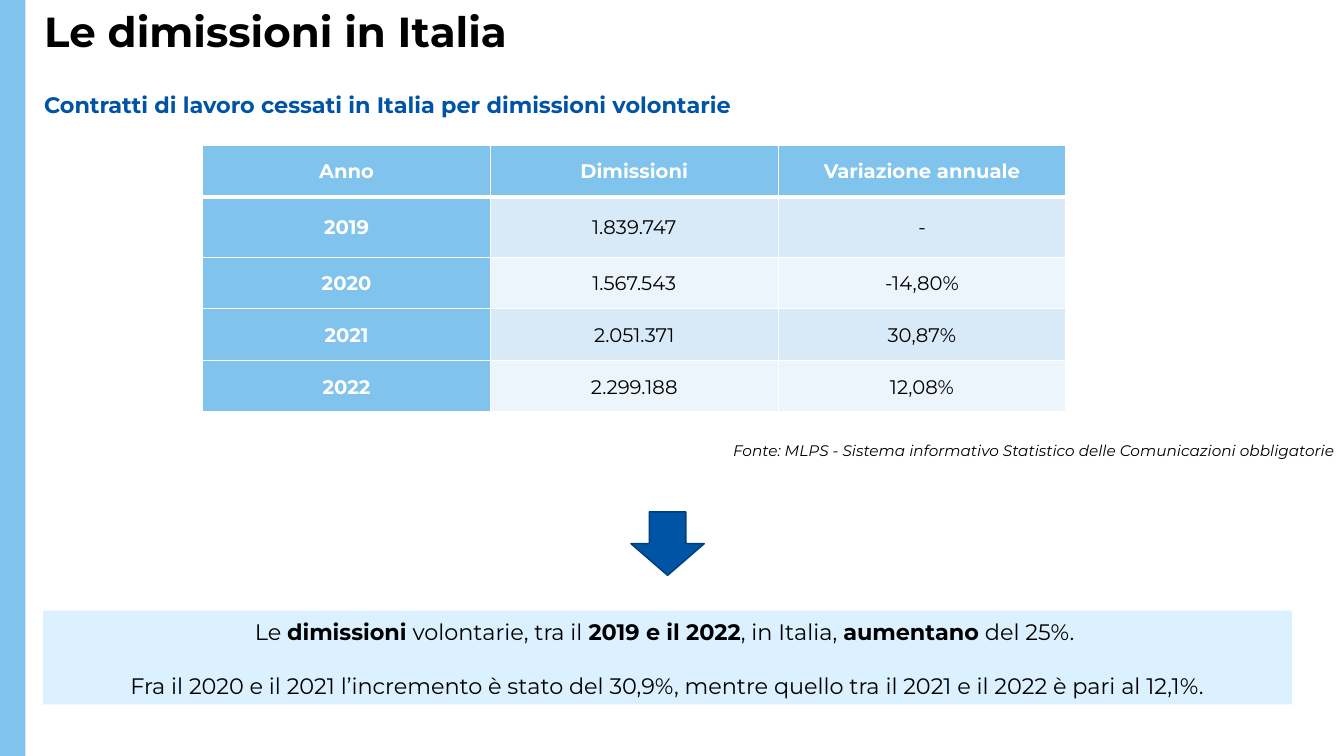
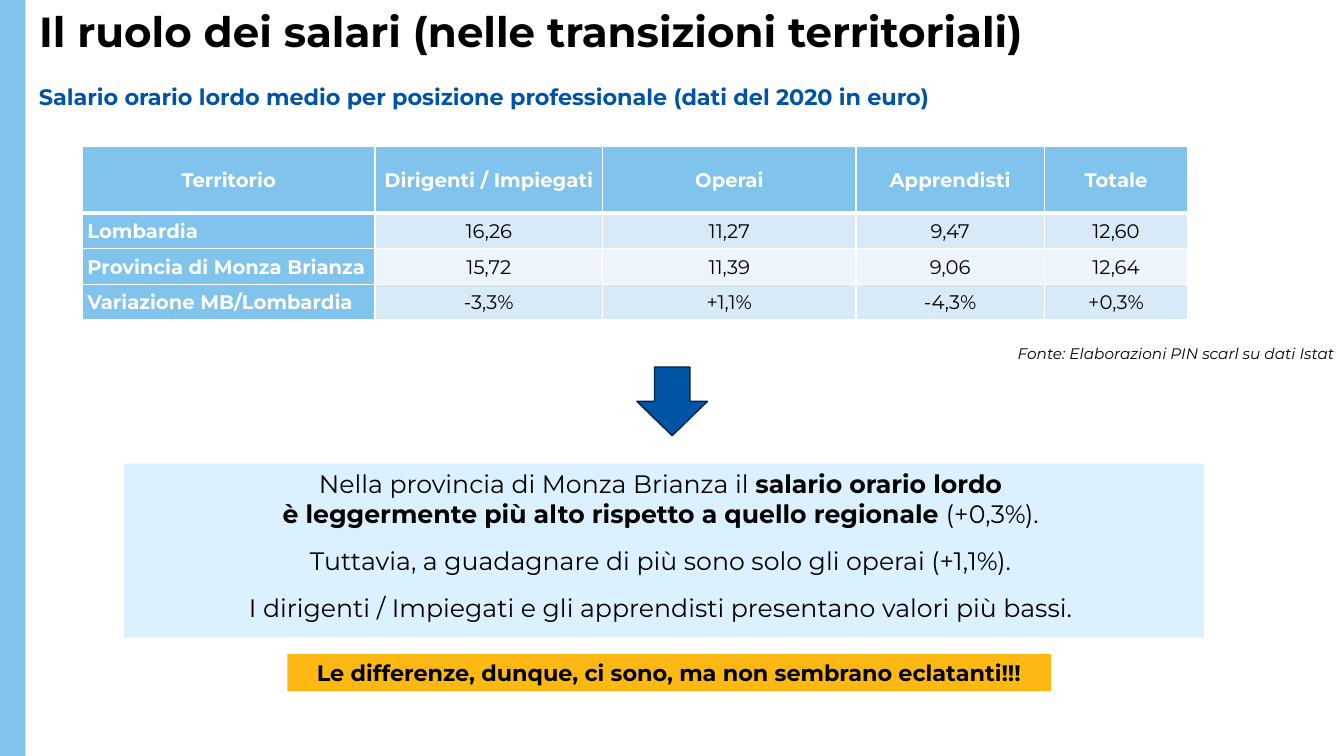
from lxml import etree
from pptx import Presentation
from pptx.dml.color import RGBColor
from pptx.enum import shapes, text
from pptx.oxml import ns
from pptx.util import Cm, Pt

FONT = "Montserrat"
BLACK, WHITE = "000000", "FFFFFF"
SKY, BLUE, YELLOW = "80C3ED", "0054A6", "FDB813"
PALE, STRIPES = "CCECFF", ("D8E9F8", "EDF5FC")
LEFT, CENTER, RIGHT = text.PP_ALIGN.LEFT, text.PP_ALIGN.CENTER, text.PP_ALIGN.RIGHT
TOP, MIDDLE = text.MSO_ANCHOR.TOP, text.MSO_ANCHOR.MIDDLE
BREAK = "\n"


def paint(fill, color):
    fill.solid()
    fill.fore_color.rgb = RGBColor.from_string(color)


def write(frame, paras, size, color=BLACK, align=LEFT, leading=1.07, gap=0, italic=False):
    frame.word_wrap = True
    for index, spans in enumerate(paras):
        para = frame.add_paragraph() if index else frame.paragraphs[0]
        para.alignment = align
        para.line_spacing = leading
        para.space_before = Pt(gap if index else 0)
        for words, bold in spans:
            if words == BREAK:
                para.add_line_break()
                continue
            span = para.add_run()
            span.text = words
            span.font.name = FONT
            span.font.size = Pt(size)
            span.font.bold = bold
            span.font.italic = italic
            paint(span.font.fill, color)


topics = [
    {
        "title": "Le dimissioni in Italia",
        "left": 0.86,
        "subtitle": "Contratti di lavoro cessati in Italia per dimissioni volontarie",
        "subtitle_top": 2.13,
        "table_at": (5.11, 3.66),
        "columns": [7.25] * 3,
        "heights": [1.3, 1.52, 1.3, 1.3, 1.3],
        "label_align": CENTER,
        "rows": [
            ["Anno", "Dimissioni", "Variazione annuale"],
            ["2019", "1.839.747", "-"],
            ["2020", "1.567.543", "-14,80%"],
            ["2021", "2.051.371", "30,87%"],
            ["2022", "2.299.188", "12,08%"],
        ],
        "source": "Fonte: MLPS - Sistema informativo Statistico delle Comunicazioni obbligatorie",
        "source_top": 10.95,
        "arrow": (15.9, 12.9, 1.85, 1.6),
        "arrow_line": "003E7B",
        "message_at": (1.09, 15.39, 31.47, 2.36),
        "message_style": {"size": 16, "leading": 1.07, "gap": 18},
        "message_anchor": MIDDLE,
        "message": [
            [("Le ", False), ("dimissioni", True), (" volontarie, tra il ", False),
             ("2019 e il 2022", True), (", in Italia, ", False),
             ("aumentano", True), (" del 25%. ", False)],
            [("Fra il 2020 e il 2021 l’incremento è stato del 30,9%, mentre quello "
              "tra il 2021 e il 2022 è pari al 12,1%.", False)],
        ],
        "verdict": None,
    },
    {
        "title": "Il ruolo dei salari (nelle transizioni territoriali)",
        "left": 0.73,
        "subtitle": "Salario orario lordo medio per posizione professionale (dati del 2020 in euro)",
        "subtitle_top": 1.92,
        "table_at": (2.08, 3.68),
        "columns": [7.37, 5.74, 6.38, 4.75, 3.61],
        "heights": [1.68, 0.9, 0.9, 0.9],
        "label_align": LEFT,
        "rows": [
            ["Territorio", "Dirigenti / Impiegati", "Operai", "Apprendisti", "Totale"],
            ["Lombardia", "16,26", "11,27", "9,47", "12,60"],
            ["Provincia di Monza Brianza", "15,72", "11,39", "9,06", "12,64"],
            ["Variazione MB/Lombardia", "-3,3%", "+1,1%", "-4,3%", "+0,3%"],
        ],
        "source": "Fonte: Elaborazioni PIN scarl su dati Istat",
        "source_top": 8.51,
        "arrow": (16.05, 9.25, 1.78, 1.73),
        "arrow_line": "002549",
        "message_at": (3.12, 11.68, 27.23, 4.39),
        "message_style": {"size": 18, "leading": 1.0, "gap": 12},
        "message_anchor": TOP,
        "message": [
            [("Nella provincia di Monza Brianza il ", False), ("salario orario lordo ", True),
             (BREAK, True), ("è leggermente più alto rispetto a quello regionale ", True),
             ("(+0,3%). ", False)],
            [("Tuttavia, a guadagnare di più sono solo gli operai (+1,1%). ", False)],
            [("I dirigenti / Impiegati e gli apprendisti presentano valori più bassi. ", False)],
        ],
        "verdict": "Le differenze, dunque, ci sono, ma non sembrano eclatanti!!!",
    },
]

deck = Presentation()
deck.slide_width, deck.slide_height = Cm(33.87), Cm(19.05)
layout = deck.slide_layouts.get_by_name("Title Only")

for topic in topics:
    page = deck.slides.add_slide(layout)

    if topic is topics[0]:
        band = page.shapes.add_shape(shapes.MSO_SHAPE.RECTANGLE, 0, 0, Cm(0.64), deck.slide_height)
        band.shadow.inherit = False
        paint(band.fill, SKY)
        band.line.fill.background()
        layout.shapes.element.insert(2, band.element)

    title = page.shapes.title
    title.left, title.top, title.width, title.height = Cm(topic["left"]), 0, Cm(31.85), Cm(1.55)
    title.text_frame.auto_size = text.MSO_AUTO_SIZE.NONE
    title.text_frame.vertical_anchor = TOP
    write(title.text_frame, [[(topic["title"], True)]], 30, leading=1.0)

    subtitle = page.shapes.add_textbox(Cm(topic["left"]), Cm(topic["subtitle_top"]), Cm(32), Cm(1))
    write(subtitle.text_frame, [[(topic["subtitle"], True)]], 16, BLUE)

    source = page.shapes.add_textbox(Cm(16.93), Cm(topic["source_top"]), Cm(16.94), Cm(0.74))
    write(source.text_frame, [[(topic["source"], False)]], 10.9, align=RIGHT, italic=True)

    rows, columns, heights = topic["rows"], topic["columns"], topic["heights"]
    left, top = topic["table_at"]
    table = page.shapes.add_table(len(rows), len(columns), Cm(left), Cm(top),
                                  Cm(sum(columns)), Cm(sum(heights))).table
    for column, width in zip(table.columns, columns):
        column.width = Cm(width)
    for r, values in enumerate(rows):
        table.rows[r].height = Cm(heights[r])
        for c, value in enumerate(values):
            cell = table.cell(r, c)
            cell.margin_left = cell.margin_right = Cm(0.12)
            cell.margin_top = cell.margin_bottom = 0
            cell.vertical_anchor = MIDDLE
            heading = r == 0 or c == 0
            align = topic["label_align"] if c == 0 and r else CENTER
            write(cell.text_frame, [[(value, heading)]], 14, WHITE if heading else BLACK, align)
            borders = cell._tc.get_or_add_tcPr()
            for side in ("L", "R", "T", "B"):
                thick = (r, side) in ((0, "B"), (1, "T"))
                edge = etree.SubElement(borders, ns.qn(f"a:ln{side}"), w=str(Pt(3 if thick else 1)))
                solid = etree.SubElement(edge, ns.qn("a:solidFill"))
                etree.SubElement(solid, ns.qn("a:srgbClr"), val=WHITE)
            paint(cell.fill, SKY if heading else STRIPES[(r - 1) % 2])

    arrow = page.shapes.add_shape(shapes.MSO_SHAPE.DOWN_ARROW, *map(Cm, topic["arrow"]))
    arrow.shadow.inherit = False
    paint(arrow.fill, BLUE)
    paint(arrow.line.fill, topic["arrow_line"])
    arrow.line.width = Pt(1)

    panels = [(topic["message_at"], PALE, topic["message"], topic["message_style"], topic["message_anchor"])]
    if topic["verdict"]:
        panels.append(((7.24, 16.48, 19.25, 0.94), YELLOW, [[(topic["verdict"], True)]],
                       {"size": 16, "leading": 1.0}, MIDDLE))
    for place, color, paras, style, anchor in panels:
        box = page.shapes.add_shape(shapes.MSO_SHAPE.RECTANGLE, *map(Cm, place))
        box.shadow.inherit = False
        paint(box.fill, color)
        if color == PALE:
            tone = box.element.spPr.find(".//" + ns.qn("a:srgbClr"))
            etree.SubElement(tone, ns.qn("a:alpha"), val="70000")
        box.line.fill.background()
        box.text_frame.vertical_anchor = anchor
        write(box.text_frame, paras, align=CENTER, **style)

deck.save("out.pptx")
